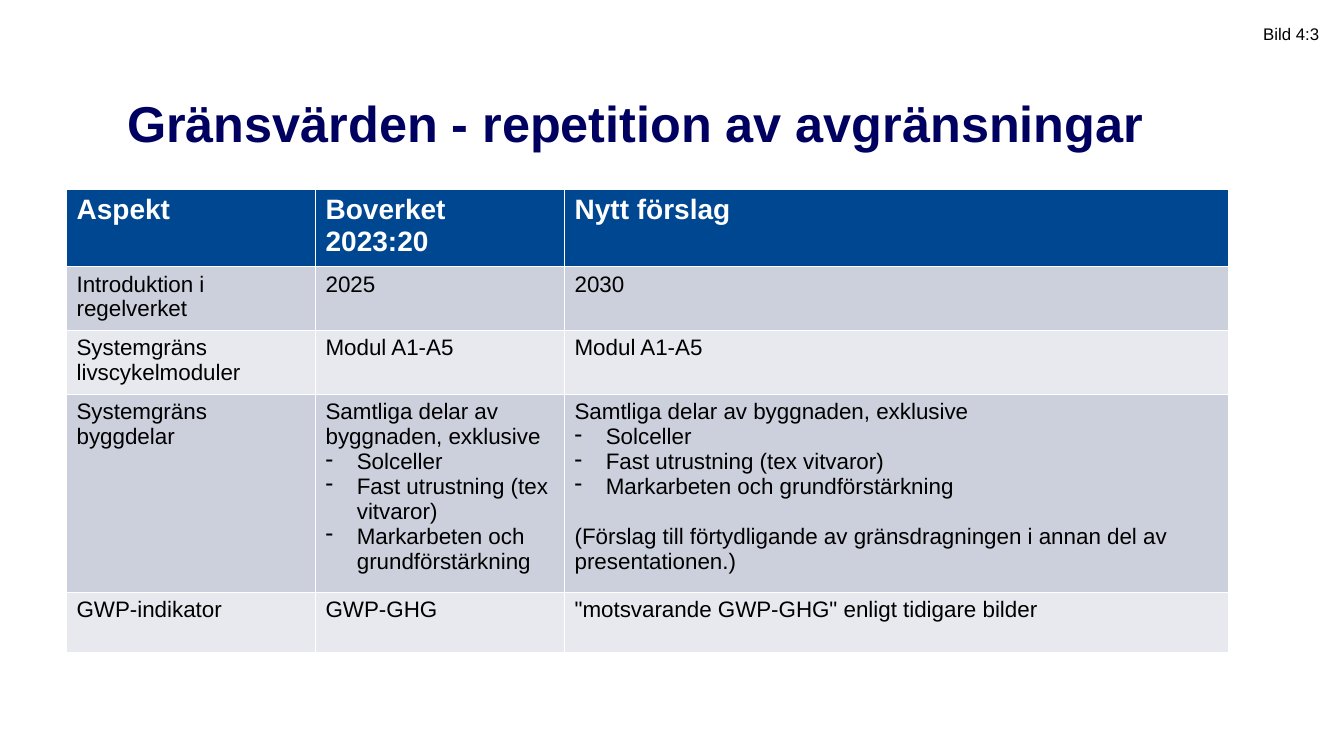
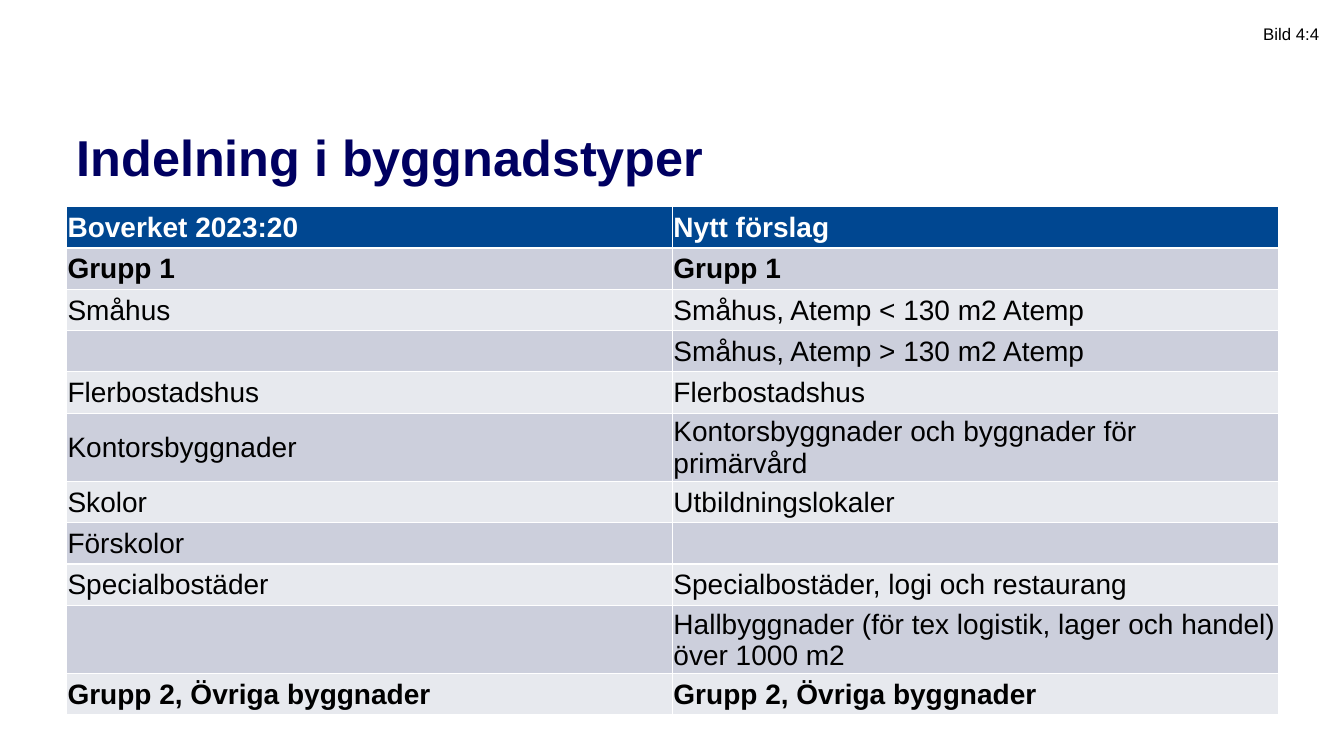
from lxml.etree import SubElement
from pptx import Presentation
from pptx.dml.color import RGBColor
from pptx.enum.text import MSO_ANCHOR, PP_ALIGN
from pptx.oxml.ns import qn
from pptx.util import Pt

PX = 9144
NAVY = RGBColor(0x00, 0x00, 0x61)
BLUE = RGBColor(0x00, 0x47, 0x91)
DARK = RGBColor(0xCC, 0xCF, 0xDC)
LIGHT = RGBColor(0xE7, 0xE9, 0xEE)
WHITE = RGBColor(0xFF, 0xFF, 0xFF)
BLACK = RGBColor(0x00, 0x00, 0x00)
INDENT = 31

PARTS = [
    "Samtliga delar av byggnaden, exklusive",
    "- Solceller",
    "- Fast utrustning (tex vitvaror)",
    "- Markarbeten och grundförstärkning",
]
NOTE = "(Förslag till förtydligande av gränsdragningen i annan del av presentationen.)"

LIMITS = [
    ["Aspekt", "Boverket 2023:20", "Nytt förslag"],
    ["Introduktion i regelverket", "2025", "2030"],
    ["Systemgräns livscykelmoduler", "Modul A1-A5", "Modul A1-A5"],
    ["Systemgräns byggdelar", PARTS, PARTS + [NOTE]],
    ["GWP-indikator", "GWP-GHG", "\"motsvarande GWP-GHG\" enligt tidigare bilder"],
]

TYPES = [
    ["Boverket 2023:20", "Nytt förslag"],
    ["Grupp 1", "Grupp 1"],
    ["Småhus", "Småhus, Atemp < 130 m2 Atemp"],
    ["", "Småhus, Atemp > 130 m2 Atemp"],
    ["Flerbostadshus", "Flerbostadshus"],
    ["Kontorsbyggnader", "Kontorsbyggnader och byggnader för primärvård"],
    ["Skolor", "Utbildningslokaler"],
    ["Förskolor", ""],
    ["Specialbostäder", "Specialbostäder, logi och restaurang"],
    ["", "Hallbyggnader (för tex logistik, lager och handel) över 1000 m2"],
    ["Grupp 2, Övriga byggnader", "Grupp 2, Övriga byggnader"],
]


def px(*values):
    return [value * PX for value in values]


def put(item, **values):
    for name, value in values.items():
        setattr(item, name, value)


def style(para, size, color, bold=False):
    put(para.font, name="Arial", size=Pt(size), bold=bold)
    para.font.color.rgb = color


def dash(para):
    props = para._p.get_or_add_pPr()
    props.set("marL", str(INDENT * PX))
    props.set("indent", str(-INDENT * PX))
    SubElement(props, qn("a:buChar")).set("char", "-")


def add_title(slide, text, left, top):
    title = slide.shapes.title
    left, top, width, height = px(left, top, 1202, 62)
    put(title, left=left, top=top, width=width, height=height)
    frame = title.text_frame
    side, above, below = px(10, 12, 5)
    put(frame, text=text, word_wrap=True, vertical_anchor=MSO_ANCHOR.TOP,
        margin_left=side, margin_right=side,
        margin_top=above, margin_bottom=below)
    para = frame.paragraphs[0]
    put(para, alignment=PP_ALIGN.LEFT, line_spacing=0.9)
    style(para, 36, NAVY, True)


def add_label(slide, text):
    frame = slide.shapes.add_textbox(*px(1243, 19, 76, 30)).text_frame
    put(frame, text=text, word_wrap=False)
    style(frame.paragraphs[0], 12, BLACK)


def fill_cell(cell, text, fill, font, format):
    cell.fill.solid()
    cell.fill.fore_color.rgb = fill
    put(cell, **format)
    lines = [text] if isinstance(text, str) else text
    frame = cell.text_frame
    for spot, line in enumerate(lines):
        para = frame.paragraphs[0] if spot == 0 else frame.add_paragraph()
        para.text = line.removeprefix("- ")
        if line == NOTE:
            para.space_before = Pt(18)
        if line.startswith("- "):
            dash(para)
        style(para, *font)


def add_grid(slide, data, top, widths, heights, size, format):
    box = px(66, top, sum(widths), sum(heights))
    grid = slide.shapes.add_table(len(data), len(widths), *box).table
    for column, width in zip(grid.columns, px(*widths)):
        column.width = width
    for row, height in zip(grid.rows, px(*heights)):
        row.height = height
    for y, line in enumerate(data):
        head = y == 0
        fill = BLUE if head else DARK if y % 2 else LIGHT
        for x, text in enumerate(line):
            bold = head or text[:5] == "Grupp"
            font = (20, WHITE, bold) if head else (size, BLACK, bold)
            fill_cell(grid.cell(y, x), text, fill, font, format)


def add_page(deck, label, title, left, top):
    slide = deck.slides.add_slide(deck.slide_layouts[5])
    add_title(slide, title, left, top)
    add_label(slide, label)
    return slide


def main():
    deck = Presentation()
    width, height = px(1333, 750)
    put(deck, slide_width=width, slide_height=height)

    slide = add_page(deck, "Bild 4:3", "Gränsvärden - repetition av avgränsningar", 116, 86)
    add_grid(slide, LIMITS, 188, [247, 247, 659], [72, 59, 59, 184, 59], 16, {})

    slide = add_page(deck, "Bild 4:4", "Indelning i byggnadstyper", 66, 120)
    tight = dict(margin_left=PX, margin_right=PX, margin_top=PX, margin_bottom=0,
                 vertical_anchor=MSO_ANCHOR.MIDDLE)
    heights = [64 if y in (5, 9) else 41 for y in range(len(TYPES))]
    add_grid(slide, TYPES, 205, [601, 601], heights, 20, tight)

    deck.save("out.pptx")


if __name__ == "__main__":
    main()
